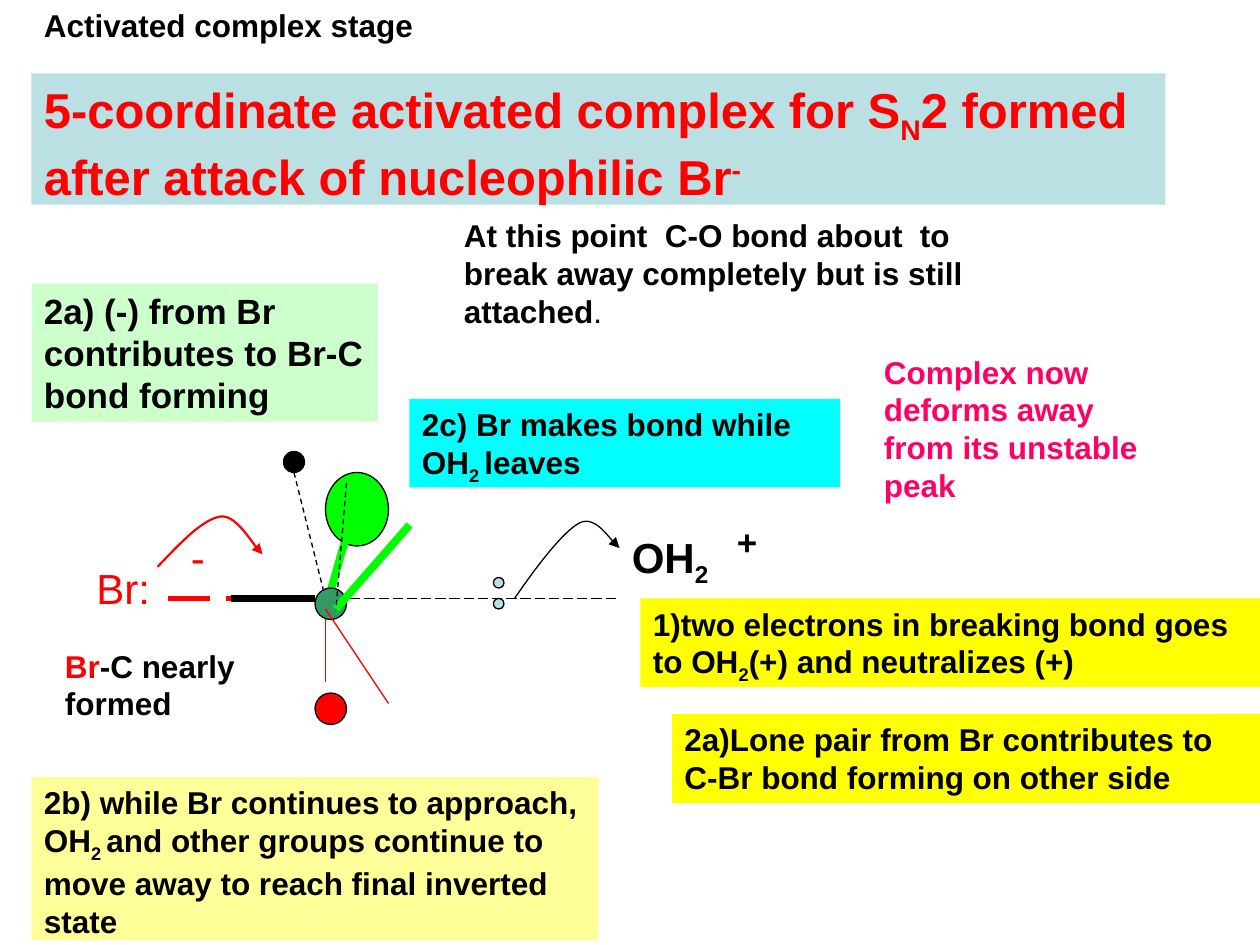
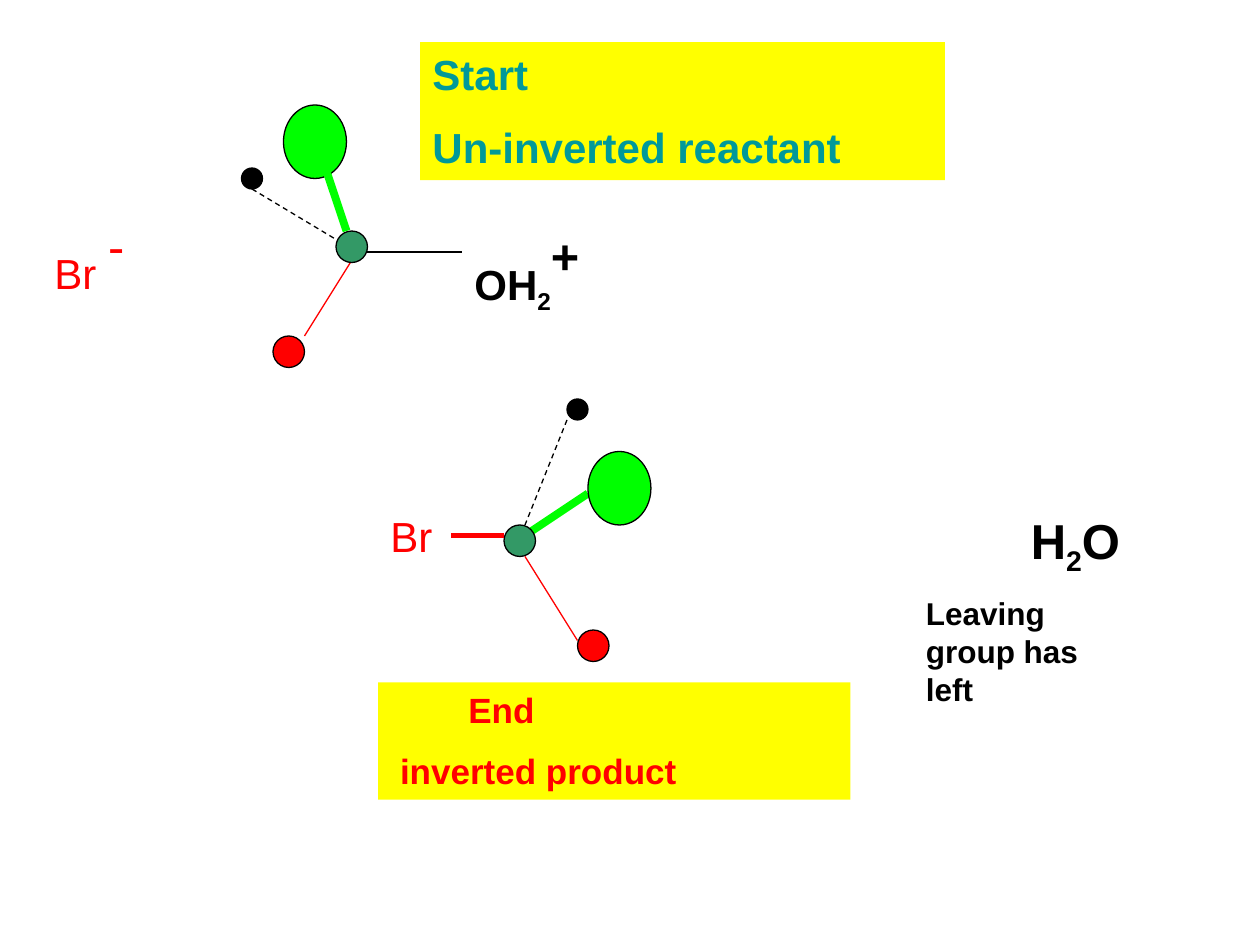
from lxml import etree
from pptx import Presentation
from pptx.dml.color import RGBColor
from pptx.enum.dml import MSO_LINE
from pptx.enum.shapes import MSO_CONNECTOR, MSO_SHAPE
from pptx.enum.text import MSO_ANCHOR, MSO_AUTO_SIZE, PP_ALIGN
from pptx.oxml.ns import qn
from pptx.util import Pt

OVAL, RECT = MSO_SHAPE.OVAL, MSO_SHAPE.RECTANGLE
STRAIGHT = MSO_CONNECTOR.STRAIGHT
DASH, LONG_DASH = MSO_LINE.DASH, MSO_LINE.LONG_DASH
LEFT, TOP = PP_ALIGN.LEFT, MSO_ANCHOR.TOP
GROW = MSO_AUTO_SIZE.SHAPE_TO_FIT_TEXT

FONT = "Arial"
COLORS = {
    "black": "000000", "red": "FF0000", "green": "00FF00", "carbon": "339966",
    "pale blue": "BBE0E3", "yellow": "FFFF00", "pale yellow": "FFFF99",
    "pale green": "CCFFCC", "cyan": "00FFFF", "pink": "FF0066", "teal": "009999",
}
RGB = {name: RGBColor.from_string(value) for name, value in COLORS.items()}

# Atoms: fill, width, height
ATOMS = {
    "green atom": ("green", 36, 42),
    "black atom": ("black", 12, 12),
    "red atom": ("red", 18, 18),
    "carbon atom": ("carbon", 18, 18),
    "electron": ("pale blue", 6, 6),
}
# Bonds: colour, width, dash
BONDS = {
    "front": ("green", 4.5, None),
    "back": ("black", 0.75, DASH),
    "side": ("red", 0.75, None),
    "approaching": ("red", 3, LONG_DASH),
    "bromine": ("red", 3, None),
    "forming": ("black", 4.5, None),
    "breaking": ("black", 0.75, LONG_DASH),
    "oxygen": ("black", 0.75, None),
}
SUB, SUPER = {"base": -25000}, {"base": 30000}
BIG_SUPER = {"base": 30000, "size": 48}


def draw_molecule(s, parts):
    """Draw atoms (left, top) and bonds (x1, y1, x2, y2) from back to front."""
    for kind, *at in parts:
        if kind in ATOMS:
            fill, width, height = ATOMS[kind]
            sp = s.shapes.add_shape(OVAL, *map(Pt, (*at, width, height)))
            sp.shadow.inherit = False
            sp.fill.solid()
            sp.fill.fore_color.rgb = RGB[fill]
            sp.line.color.rgb = RGB["black"]
            sp.line.width = Pt(0.75)
        else:
            color, width, dash = BONDS[kind]
            bond = s.shapes.add_connector(STRAIGHT, *map(Pt, at))
            bond.line.color.rgb = RGB[color]
            bond.line.width = Pt(width)
            if dash:
                bond.line.dash_style = dash
            etree.SubElement(bond.element.spPr, qn("a:effectLst"))


def add_label(s, box, size, color, *paragraphs, bold=True, fill=None, indents=()):
    """Add text; a paragraph is a list of (text, overrides) runs."""
    box = [Pt(v) for v in box]
    if fill:
        sp = s.shapes.add_shape(RECT, *box)
        sp.shadow.inherit = False
        sp.fill.solid()
        sp.fill.fore_color.rgb = RGB[fill]
        sp.line.fill.background()
    else:
        sp = s.shapes.add_textbox(*box)
    tf = sp.text_frame
    tf.word_wrap = True
    tf.auto_size = GROW
    tf.vertical_anchor = TOP
    for i, runs in enumerate(paragraphs):
        p = tf.add_paragraph() if i else tf.paragraphs[0]
        p.alignment = LEFT
        if i:
            p.space_before = Pt(size * 0.55)
        if indents:
            p._p.get_or_add_pPr().set("marL", str(Pt(indents[i])))
        for text, changes in runs:
            r = p.add_run()
            r.text = text
            r.font.name = FONT
            r.font.size = Pt(changes.get("size", size))
            r.font.bold = changes.get("bold", bold)
            r.font.color.rgb = RGB[changes.get("color", color)]
            if "base" in changes:
                r.font._element.set("baseline", str(changes["base"]))


prs = Presentation()
prs.slide_width, prs.slide_height = Pt(720), Pt(540)
blank = prs.slide_layouts[6]

# Slide 1: activated complex
s = prs.slides.add_slide(blank)
draw_molecule(s, [
    ("green atom", 186, 270),
    ("front", 186, 348, 198, 306),
    ("back", 168, 270, 186, 342),
    ("black atom", 162, 258),
    ("approaching", 96, 342, 180, 342),
    ("red atom", 180, 396),
    ("side", 186, 348, 186, 390),
    ("breaking", 192, 342, 354, 342),
    ("carbon atom", 180, 336),
    ("bromine", 138, 342, 174, 342),
    ("electron", 282, 342),
    ("electron", 282, 330),
    ("forming", 180, 342, 132, 342),
    ("front", 192, 348, 234, 300),
    ("back", 198, 276, 192, 348),
    ("side", 186, 348, 222, 402),
])

# Electron-pair arrows: each is two cubic curves sharing their middle point
STEPS = 16
electron_arrows = [
    ("black", 0.75, [(294, 342), (307.4, 322.6), (321.8, 303.8), (331.2, 298.8),
                     (341.3, 293.8), (349.9, 311), (354, 313.2)]),
    ("red", 1.25, [(90, 324), (103, 310.3), (115.9, 296.6), (126, 295.2),
                   (136.1, 293.8), (146.2, 314.6), (150, 316.8)]),
]
for color, width, points in electron_arrows:
    vertices = []
    for start in (0, 3):
        curve = points[start:start + 4]
        for step in range(1, STEPS + 1):
            t = step / STEPS
            weights = ((1 - t)**3, 3 * t * (1 - t)**2, 3 * t**2 * (1 - t), t**3)
            vertices.append(tuple(Pt(sum(w * c for w, c in zip(weights, axis)))
                                  for axis in zip(*curve)))
    builder = s.shapes.build_freeform(*map(Pt, points[0]))
    builder.add_line_segments(vertices, close=False)
    sp = builder.convert_to_shape()
    sp.shadow.inherit = False
    sp.fill.background()
    sp.line.color.rgb = RGB[color]
    sp.line.width = Pt(width)
    ln = sp.element.spPr.find(qn("a:ln"))
    etree.SubElement(ln, qn("a:tailEnd"), type="triangle")

add_label(s, (18, 0, 228, 29), 18, "black", [("Activated complex stage", {})])
add_label(s, (18, 42, 648, 75), 28, "red", [
    ("5-coordinate activated complex for S", {}), ("N", SUB),
    ("2 formed after attack of nucleophilic Br", {}), ("-", SUPER)],
    fill="pale blue")
add_label(s, (258, 120, 306, 72), 18, "black", [
    ("At this point  C-O bond about  to break away completely but is still attached", {}),
    (".", {"bold": False})])
add_label(s, (18, 162, 198, 79), 20, "black", [
    ("2a) (-) from Br contributes to Br-C bond forming", {})], fill="pale green")
add_label(s, (234, 228, 246, 50.5), 18, "black", [
    ("2c) Br makes bond while OH", {}), ("2 ", SUB), ("leaves", {})], fill="cyan")
add_label(s, (498, 198, 168, 94), 18, "pink", [
    ("Complex now deforms away from its unstable peak", {})])
add_label(s, (48, 318, 72, 36), 24, "red", [("Br:", {})], bold=False)
add_label(s, (102, 300, 42, 36), 24, "red", [("-", {})], bold=False)
add_label(s, (354, 300, 78, 65), 24, "black", [("OH", {}), ("2", SUB)])
add_label(s, (414, 294, 30, 31), 20, "black", [("+", {})])
add_label(s, (30, 366, 114, 50.5), 18, "black", [
    ("Br", {"color": "red"}), ("-C nearly formed", {})])
add_label(s, (366, 342, 354, 50.5), 18, "black", [
    ("1)two electrons in breaking bond goes to OH", {}), ("2", SUB),
    ("(+) and neutralizes (+)", {})], fill="yellow")
add_label(s, (384, 408, 336, 51), 18, "black", [
    ("2a)Lone pair from Br contributes to C-Br bond forming on other side", {})],
    fill="yellow")
add_label(s, (18, 444, 324, 93.5), 18, "black", [
    ("2b) while Br continues to approach, OH", {}), ("2 ", SUB),
    ("and other groups continue to move away to reach final inverted state", {})],
    fill="pale yellow")

# Slide 2: reactant and inverted product
s = prs.slides.add_slide(blank)
draw_molecule(s, [
    ("back", 144, 108, 204, 144),
    ("side", 204, 144, 174, 192),
    ("front", 300, 306, 336, 282),
    ("oxygen", 204, 144, 264, 144),
    ("red atom", 156, 192),
    ("black atom", 138, 96),
    ("green atom", 162, 60),
    ("carbon atom", 192, 132),
    ("green atom", 336, 258),
    ("carbon atom", 288, 300),
    ("back", 324, 240, 300, 300),
    ("black atom", 324, 228),
    ("front", 198, 132, 186, 96),
    ("red atom", 330, 360),
    ("side", 300, 318, 330, 366),
    ("bromine", 288, 306, 258, 306),
])
add_label(s, (240, 24, 300, 79), 24, "teal", [("Start", {})],
          [("Un-inverted reactant", {})], fill="yellow")
add_label(s, (24, 114, 72, 65), 24, "red", [("Br ", {}), ("-", BIG_SUPER)], bold=False)
add_label(s, (264, 120, 90, 45), 24, "black", [
    ("OH", {}), ("2", SUB), ("+", BIG_SUPER)])
add_label(s, (216, 288, 42, 36), 24, "red", [("Br", {})], bold=False)
add_label(s, (216, 390, 270, 67), 20, "red", [("End", {})],
          [("inverted product", {})], fill="yellow", indents=(44.5, 5.5))
add_label(s, (582, 288, 138, 41), 28, "black", [("H", {}), ("2", SUB), ("O", {})])
add_label(s, (522, 336, 126, 72), 18, "black", [("Leaving group has left", {})])

prs.save("out.pptx")
